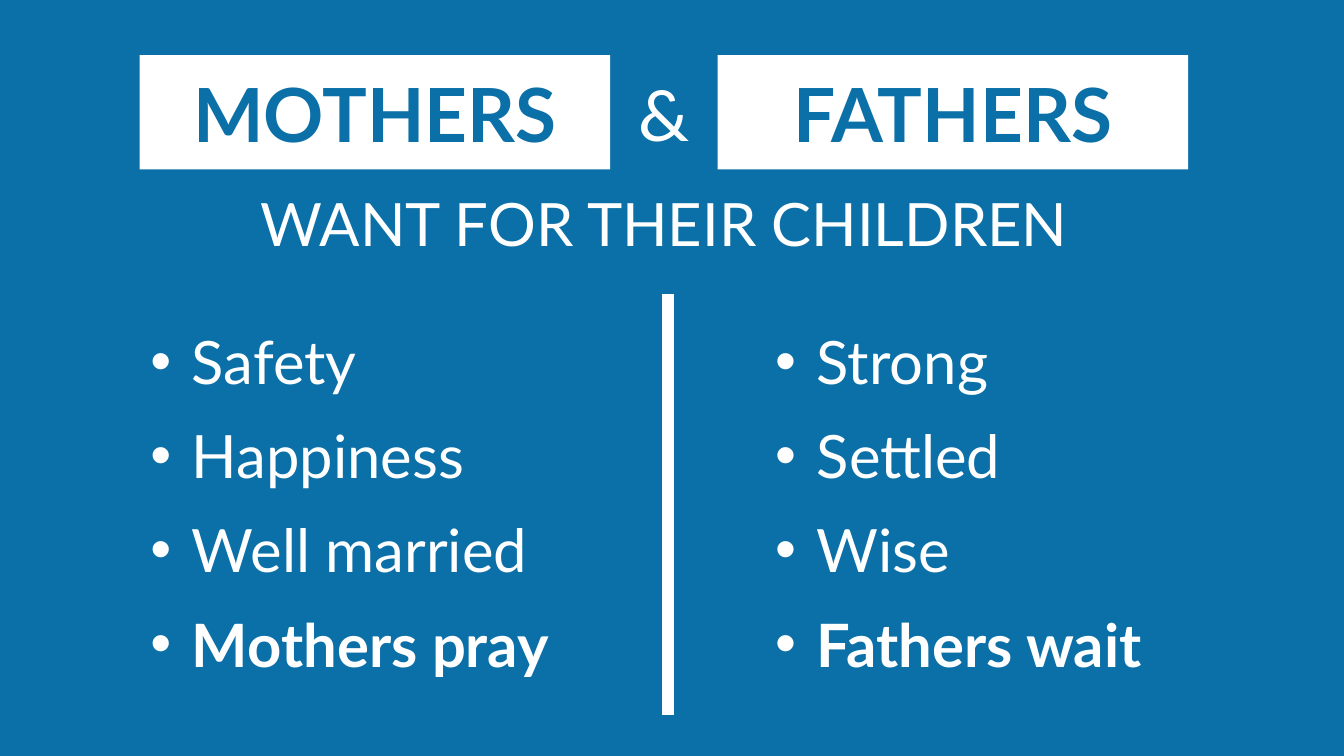
"""Build the slide on what mothers and fathers want for their children."""
from lxml import etree
from pptx import Presentation, util as u
from pptx.dml.color import RGBColor
from pptx.enum import shapes as sh, text as tx
from pptx.oxml.ns import qn

BLUE, WHITE = "0C70A8", "FFFFFF"
WIDE = 10
HIGH = WIDE * 9 / 16
SIDES = [
    ("MOTHERS", 1.04, 1.02, ["Safety", "Happiness", "Well married", "Mothers pray"]),
    ("FATHERS", 5.34, 5.67, ["Strong", "Settled", "Wise", "Fathers wait"]),
]
LABELS = [
    ("&", (4.65, 0.45, 0.58, 0.77), 40, "Calibri"),
    ("WANT FOR THEIR CHILDREN", (1.84, 1.34, 6.31, 0.64), 32, "Lato"),
]
RULE = (4.97, 2.19, 5.32)


def rgb(code):
    return RGBColor.from_string(code)


def inch(*nums):
    return [u.Inches(n) for n in nums]


def add_run(para, words, size, face="Lato", hue=WHITE, bold=False):
    run = para.add_run()
    run.text = words
    font = run.font
    font.size, font.name, font.bold = u.Pt(size), face, bold
    font.color.rgb = rgb(hue)


def add_box(slide, area, wrap):
    frame = slide.shapes.add_textbox(*inch(*area)).text_frame
    frame.word_wrap = wrap
    frame.auto_size = tx.MSO_AUTO_SIZE.SHAPE_TO_FIT_TEXT
    return frame


def add_head(slide, words, left):
    box = slide.shapes.add_shape(sh.MSO_SHAPE.RECTANGLE, *inch(left, 0.41, 3.5, 0.85))
    box.shadow.inherit = False
    box.fill.solid()
    box.fill.fore_color.rgb = rgb(WHITE)
    box.line.fill.background()
    frame = box.text_frame
    frame.vertical_anchor = tx.MSO_ANCHOR.MIDDLE
    para = frame.paragraphs[0]
    para.alignment = tx.PP_ALIGN.CENTER
    add_run(para, words, 40, hue=BLUE, bold=True)


def add_list(slide, items, left):
    frame = add_box(slide, (left, 2.37, 3.54, 2.76), True)
    for i, item in enumerate(items):
        para = frame.add_paragraph() if i else frame.paragraphs[0]
        para.space_after = u.Pt(12)
        props = para._p.get_or_add_pPr()
        props.set("marL", str(u.Inches(0.31)))
        props.set("indent", str(-u.Inches(0.31)))
        etree.SubElement(props, qn("a:buFont"), typeface="Arial")
        etree.SubElement(props, qn("a:buChar"), char="•")
        add_run(para, item, 32, bold=i == len(items) - 1)


def add_rule(slide, x, top, end):
    rule = slide.shapes.add_connector(sh.MSO_CONNECTOR.STRAIGHT, *inch(x, top, x, end))
    rule.line.color.rgb = rgb(WHITE)
    rule.line.width = u.Pt(6)
    etree.SubElement(rule._element.spPr, qn("a:effectLst"))


def main():
    deck = Presentation()
    deck.slide_width, deck.slide_height = inch(WIDE, HIGH)
    slide = deck.slides.add_slide(deck.slide_layouts[6])
    back = slide.background.fill
    back.solid()
    back.fore_color.rgb = rgb(BLUE)
    for head, left, _, _ in SIDES:
        add_head(slide, head, left)
    for words, area, size, face in LABELS:
        add_run(add_box(slide, area, False).paragraphs[0], words, size, face)
    for _, _, left, items in SIDES:
        add_list(slide, items, left)
    add_rule(slide, *RULE)
    deck.save("out.pptx")


if __name__ == "__main__":
    main()
